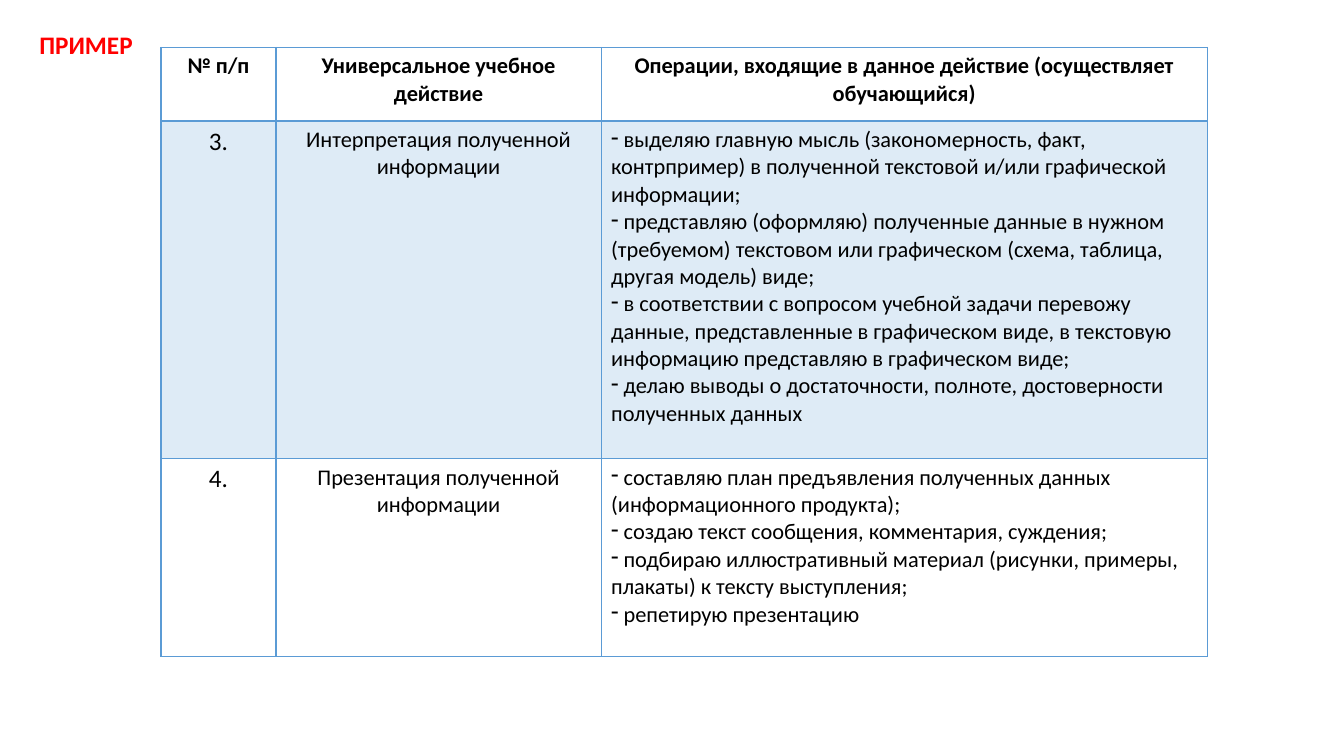
"""Builds a slide with a table of universal learning actions."""
import pptx
import pptx.util
import pptx.dml.color
import pptx.enum.text
import pptx.oxml
import pptx.oxml.ns

Pt = pptx.util.Pt
COLORS = {"text": "000000", "label": "FF0000", "line": "5B9BD5"}
FONT = "Calibri"
CENTER = pptx.enum.text.PP_ALIGN.CENTER
LEFT = pptx.enum.text.PP_ALIGN.LEFT
NS = pptx.oxml.ns.nsdecls("a")


def add_run(para, text, size, bold, color):
    run = para.add_run()
    run.text = text
    run.font.name = FONT
    run.font.size = Pt(size)
    run.font.bold = bold
    run.font.color.rgb = pptx.dml.color.RGBColor.from_string(COLORS[color])


def add_line(props, side, width, place):
    line = pptx.oxml.parse_xml(
        f'<a:ln{side} {NS} w="{Pt(width)}"><a:solidFill>'
        f'<a:srgbClr val="{COLORS["line"]}"/></a:solidFill></a:ln{side}>')
    props.insert(place, line)


deck = pptx.Presentation()
deck.slide_width, deck.slide_height = Pt(960), Pt(540)
slide = deck.slides.add_slide(deck.slide_layouts[6])

widths = [82.2, 232.2, 433]
heights = [52.5, 241.2, 141.2]
rows = [
    [["№ п/п"], ["Универсальное учебное действие"],
     ["Операции, входящие в данное действие (осуществляет обучающийся)"]],
    [["3."], ["Интерпретация полученной информации"],
     ["выделяю главную мысль (закономерность, факт, контрпример) в полученной "
      "текстовой и/или графической информации;",
      "представляю (оформляю) полученные данные в нужном (требуемом) текстовом "
      "или графическом (схема, таблица, другая модель) виде;",
      "в соответствии с вопросом учебной задачи перевожу данные, представленные "
      "в графическом виде, в текстовую информацию представляю в графическом виде;",
      "делаю выводы о достаточности, полноте, достоверности полученных данных"]],
    [["4."], ["Презентация полученной информации"],
     ["составляю план предъявления полученных данных (информационного продукта);",
      "создаю текст сообщения, комментария, суждения;",
      "подбираю иллюстративный материал (рисунки, примеры, плакаты) к тексту "
      "выступления;",
      "репетирую презентацию"]],
]

frame = slide.shapes.add_table(
    len(rows), len(widths), Pt(115), Pt(34), Pt(sum(widths)), Pt(sum(heights)))
table = frame.table
table.first_row = table.horz_banding = False
for col, width in zip(table.columns, widths):
    col.width = Pt(width)
for row, height in zip(table.rows, heights):
    row.height = Pt(height)

for r, row in enumerate(rows):
    for c, items in enumerate(row):
        cell = table.cell(r, c)
        listed = r > 0 and c == 2
        size = 18 if r > 0 and c == 0 else 16
        for i, text in enumerate(items):
            body = cell.text_frame
            para = body.paragraphs[0] if i == 0 else body.add_paragraph()
            para.alignment = LEFT if listed else CENTER
            if listed:
                bullet = pptx.oxml.parse_xml(f'<a:buChar {NS} char="-"/>')
                para._p.get_or_add_pPr().append(bullet)
                text = " " + text
            add_run(para, text, size, r == 0, "text")
        props = cell._tc.get_or_add_tcPr()
        if r == 1:
            cell.fill.solid()
            cell.fill.fore_color.rgb = pptx.dml.color.RGBColor.from_string(
                COLORS["line"])
            alpha = pptx.oxml.parse_xml(f'<a:alpha {NS} val="20000"/>')
            props.find(".//" + pptx.oxml.ns.qn("a:srgbClr")).append(alpha)
        else:
            cell.fill.background()
        for place, side in enumerate("LRTB"):
            thick = (r, side) in [(0, "B"), (1, "T")]
            add_line(props, side, 2 if thick else 1, place)

label = slide.shapes.add_textbox(Pt(21), Pt(17.5), Pt(126), Pt(29))
label.text_frame.word_wrap = True
add_run(label.text_frame.paragraphs[0], "ПРИМЕР", 18, True, "label")

deck.save("out.pptx")
